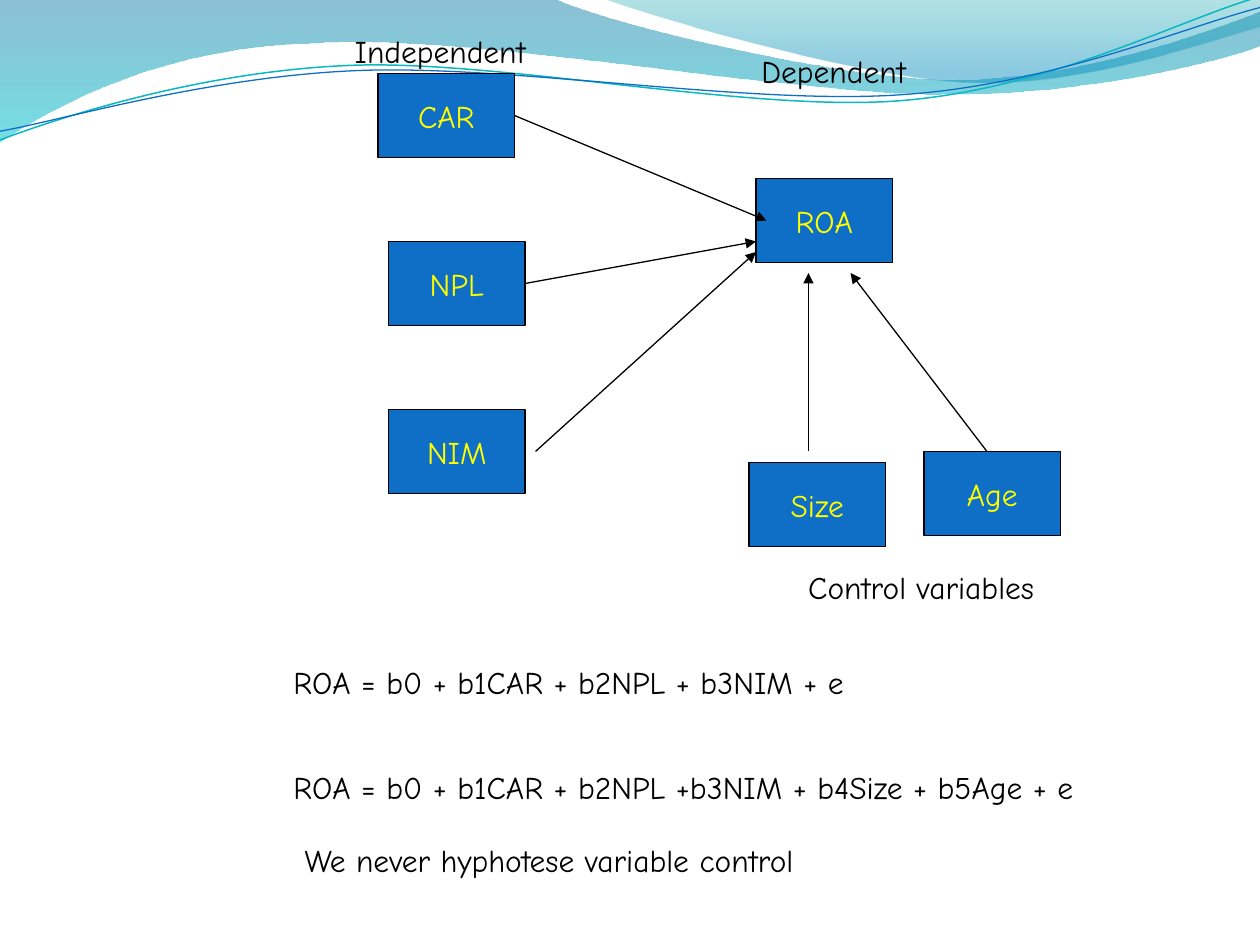
from dataclasses import dataclass

import lxml.etree
import pptx
import pptx.dml.color
import pptx.enum.shapes
import pptx.enum.text
import pptx.oxml.ns
import pptx.util

FONT = "Comic Neue"
BLACK, BLUE, YELLOW, TEAL = "000000", "0F6FC6", "FFFF00", "0AB8BF"
BOX_WIDTH, BOX_HEIGHT = 78, 48
CURVE_TILT = 357.3


@dataclass
class Variable:
    name: str
    left: float
    top: float


@dataclass
class Caption:
    words: str
    left: float
    top: float
    width: float


@dataclass
class Arrow:
    start: tuple[float, float]
    end: tuple[float, float]


@dataclass
class GradientStop:
    position: float
    color: str
    opacity: int


@dataclass
class Wave:
    start: tuple[float, float]
    segments: list[tuple[float, ...]]
    stops: tuple[GradientStop, ...] = ()
    line_color: str = ""
    line_width: float = 0.75


WAVES = [
    Wave((-0.7, -0.7), [
        (316.8, -0.7), (342.7, 12.2, 478.1, 45.4, 545.8, 45.4),
        (614.2, 45.4, 689.8, 18.7, 720, 6.5), (720.7, 25.9),
        (707.8, 31.7, 626.4, 54.7, 537.1, 54), (447.8, 54, 275, 20.2, 185, 24.5),
        (92.9, 25.9, 33.1, 59.8, -0.7, 81.4),
    ], (GradientStop(0, "0074A1", 45), GradientStop(1, "00C6CF", 55))),
    Wave((344.9, -0.7), [
        (366.5, 7.9, 491, 44.6, 553.7, 46.8), (616.3, 49.7, 691.9, 23, 720, 15.1),
        (720, 0),
    ], (GradientStop(0, "00A1A9", 30), GradientStop(0.8, "008BBF", 45))),
    Wave((-1.4, 63), [
        (33.8, 51.7, 114.1, 29.4, 199.8, 29.9), (284.9, 30.3, 425.8, 67.3, 512.4, 64.9),
        (599, 62.4, 676.4, 25.7, 720.2, 15.5),
    ], line_color=TEAL, line_width=0.85),
    Wave((-1.1, 58), [
        (32.9, 53.8, 118.3, 32.5, 204.1, 33), (290.6, 33.4, 428.9, 63.8, 515.5, 61.4),
        (601.3, 59.6, 678.5, 30.1, 721.4, 21.3),
    ], line_color=BLUE),
]
VARIABLES = [
    Variable("ROA", 432, 102), Variable("CAR", 216, 42),
    Variable("NPL", 222, 138), Variable("NIM", 222, 234),
    Variable("Age", 528, 258), Variable("Size", 428, 264.3),
]
ARROWS = [
    Arrow((294, 66), (438, 126)), Arrow((300, 162), (432, 138)),
    Arrow((306, 258), (432, 144)), Arrow((462, 258), (462, 156)),
    Arrow((564, 258), (486, 156)),
]
CAPTIONS = [
    Caption("Independent", 195.6, 14.9, 121.7),
    Caption("Dependent", 428, 26.2, 104.4),
    Caption("Control variables", 454.8, 321.2, 156.2),
    Caption("ROA = b0 + b1CAR + b2NPL + b3NIM + e", 160.6, 375.2, 352.8),
    Caption("ROA = b0 + b1CAR + b2NPL +b3NIM + b4Size + b5Age + e", 160.6, 435.4, 499),
    Caption("We never hyphotese variable control", 167, 477.2, 323.3),
]


def rgb(code: str) -> pptx.dml.color.RGBColor:
    return pptx.dml.color.RGBColor.from_string(code)


def add_child(parent, tag: str, **attributes: str) -> None:
    lxml.etree.SubElement(parent, pptx.oxml.ns.qn(tag), attributes)


def set_line(line, color: str, width: float = 0.75) -> None:
    line.color.rgb = rgb(color)
    line.width = pptx.util.Pt(width)


def write(frame, words: str, color: str) -> None:
    frame.word_wrap = False
    run = frame.paragraphs[0].add_run()
    run.text = words
    run.font.name = FONT
    run.font.size = pptx.util.Pt(18)
    run.font.color.rgb = rgb(color)


def bend(ribbon, segments: list[tuple[float, ...]]) -> None:
    steps = iter(list(ribbon._element.iter(pptx.oxml.ns.qn("a:lnTo"))))
    for segment in segments:
        curve = next(steps)
        if len(segment) == 2:
            continue
        for step in (next(steps), next(steps)):
            curve.append(step[0])
            step.getparent().remove(step)
        curve.tag = pptx.oxml.ns.qn("a:cubicBezTo")


def draw_wave(shapes, wave: Wave) -> None:
    points = [
        (pptx.util.Pt(x), pptx.util.Pt(y))
        for segment in [wave.start, *wave.segments]
        for x, y in zip(segment[::2], segment[1::2])
    ]
    builder = shapes.build_freeform(*points[0])
    builder.add_line_segments(points[1:], close=bool(wave.stops))
    ribbon = builder.convert_to_shape()
    bend(ribbon, wave.segments)
    ribbon.shadow.inherit = False
    if not wave.stops:
        ribbon.rotation = CURVE_TILT
        ribbon.fill.background()
        set_line(ribbon.line, wave.line_color, wave.line_width)
        return
    ribbon.line.fill.background()
    ribbon.fill.gradient()
    ribbon.fill.gradient_angle = 270
    for target, stop in zip(ribbon.fill.gradient_stops, wave.stops):
        target.position = stop.position
        target.color.rgb = rgb(stop.color)
    tints = list(ribbon._element.spPr.iter(pptx.oxml.ns.qn("a:srgbClr")))
    for tint, stop in zip(tints, wave.stops):
        add_child(tint, "a:alpha", val=str(stop.opacity * 1000))


def draw_variable(shapes, variable: Variable) -> None:
    box = shapes.add_shape(
        pptx.enum.shapes.MSO_SHAPE.RECTANGLE,
        pptx.util.Pt(variable.left), pptx.util.Pt(variable.top),
        pptx.util.Pt(BOX_WIDTH), pptx.util.Pt(BOX_HEIGHT))
    box.shadow.inherit = False
    box.fill.solid()
    box.fill.fore_color.rgb = rgb(BLUE)
    set_line(box.line, BLACK)
    box.text_frame.vertical_anchor = pptx.enum.text.MSO_ANCHOR.MIDDLE
    box.text_frame.paragraphs[0].alignment = pptx.enum.text.PP_ALIGN.CENTER
    write(box.text_frame, variable.name, YELLOW)


def draw_arrow(shapes, arrow: Arrow) -> None:
    connector = shapes.add_connector(
        pptx.enum.shapes.MSO_CONNECTOR.STRAIGHT,
        *(pptx.util.Pt(value) for value in arrow.start + arrow.end))
    set_line(connector.line, BLACK)
    properties = connector._element.spPr
    add_child(properties.find(pptx.oxml.ns.qn("a:ln")), "a:tailEnd", type="triangle")
    add_child(properties, "a:effectLst")


def draw_caption(shapes, caption: Caption) -> None:
    label = shapes.add_textbox(
        pptx.util.Pt(caption.left), pptx.util.Pt(caption.top),
        pptx.util.Pt(caption.width), pptx.util.Pt(29))
    write(label.text_frame, caption.words, BLACK)
    label.text_frame.auto_size = pptx.enum.text.MSO_AUTO_SIZE.SHAPE_TO_FIT_TEXT


def main() -> None:
    deck = pptx.Presentation()
    deck.slide_width = pptx.util.Pt(720)
    deck.slide_height = pptx.util.Pt(540)
    shapes = deck.slides.add_slide(deck.slide_layouts[6]).shapes
    for draw, items in (
        (draw_wave, WAVES), (draw_variable, VARIABLES),
        (draw_arrow, ARROWS), (draw_caption, CAPTIONS),
    ):
        for item in items:
            draw(shapes, item)
    deck.save("out.pptx")


if __name__ == "__main__":
    main()
